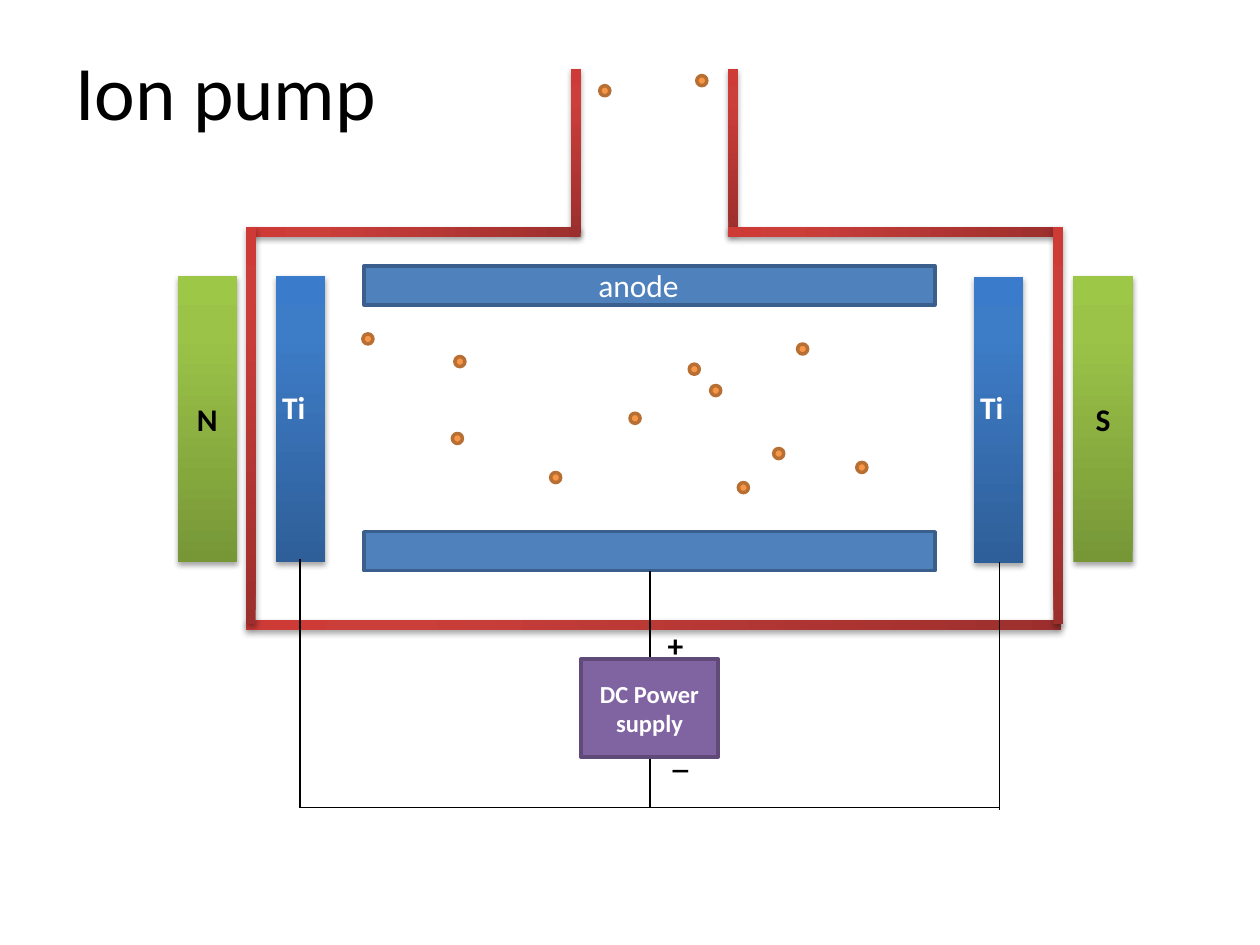
from pptx import Presentation
from pptx.dml.color import RGBColor
from pptx.enum.shapes import MSO_CONNECTOR, MSO_SHAPE as SHAPE
from pptx.enum.text import MSO_ANCHOR as ANCHOR, MSO_AUTO_SIZE as AUTO, PP_ALIGN as ALIGN
from pptx.oxml import parse_xml
from pptx.oxml.ns import nsdecls
from pptx.util import Inches, Pt

THEME = {
    "font": "Calibri",
    "title": 44, "label": 18, "supply": 14,
    "black": "000000", "white": "FFFFFF",
    "wall": ("9C2F2D", "CB3E3A", "CE3B37"),
    "cathode": ("2F5F99", "3D7CC7", "3A7CCB"),
    "magnet": ("779737", "9BC348", "9DC746"),
    "anode": ("4F81BD", "3A5F8C"),
    "power": ("8064A2", "5F4A78"),
    "particle": ("F79646", "B76F34"),
    "outline": 2, "wire": 0.75,
}

WALL = 0.08
UPRIGHT_WALLS = [(4.53, 0.55, 1.3), (5.78, 0.55, 1.3), (1.95, 1.8, 3.15), (8.36, 1.8, 3.15)]
LEVEL_WALLS = [(5.78, 1.8, 2.6), (2.01, 1.8, 2.6), (1.95, 4.92, 6.47)]
ANODE_TOPS = [2.11, 4.22]
CATHODES = [(2.19, 2.19), (7.73, 2.2)]
MAGNETS = [("S", 8.52), ("N", 1.41)]
PARTICLE = 0.08
PARTICLES = [
    (3.61, 2.83), (5, 3.28), (4.37, 3.75), (6.33, 2.73), (6.8, 3.67),
    (5.86, 3.83), (5.47, 2.89), (3.59, 3.44), (5.64, 3.06), (5.53, 0.6),
    (2.88, 2.65), (6.14, 3.56), (4.76, 0.68),
]
WIRES = [
    (2.38, 4.44, 2.38, 6.41), (7.93, 4.46, 7.93, 6.43),
    (5.16, 4.53, 5.16, 6.41), (2.38, 6.41, 7.93, 6.41),
]
LABELS = [
    ("+", (5.2, 4.92, 0.25, 0.4), "black", True),
    ("_", (5.24, 5.8, 0.33, 0.4), "black", True),
    ("Ti", (2.14, 3.03, 0.47, 0.4), "white", True),
    ("Ti", (7.68, 3.03, 0.47, 0.4), "white", True),
    ("anode", (4.65, 2.06, 1, 0.4), "white", False),
]


def rgb(color):
    return RGBColor.from_string(color)


def inches(values):
    return [Inches(value) for value in values]


def write(frame, text, size, color, bold=False, align=ALIGN.LEFT):
    frame.word_wrap = True
    paragraph = frame.paragraphs[0]
    paragraph.alignment = align
    run = paragraph.add_run()
    run.text = text
    run.font.name = THEME["font"]
    run.font.size = Pt(THEME[size])
    run.font.bold = bold
    run.font.color.rgb = rgb(THEME[color])


def write_centred(body, text, size, color):
    body.text_frame.vertical_anchor = ANCHOR.MIDDLE
    write(body.text_frame, text, size, color, True, ALIGN.CENTER)


def add_flat(slide, kind, box, part):
    body = slide.shapes.add_shape(kind, *inches(box))
    fill, edge = THEME[part]
    body.fill.solid()
    body.fill.fore_color.rgb = rgb(fill)
    body.line.color.rgb = rgb(edge)
    body.line.width = Pt(THEME["outline"])
    body.shadow.inherit = False
    return body


def add_glossy(slide, box, part):
    body = slide.shapes.add_shape(SHAPE.RECTANGLE, *inches(box))
    stops = "".join(
        f'<a:gs pos="{place * 1000}"><a:srgbClr val="{color}"/></a:gs>'
        for place, color in zip((0, 80, 100), THEME[part]))
    properties = body.element.spPr
    properties.append(parse_xml(
        f'<a:gradFill {nsdecls("a")} rotWithShape="1"><a:gsLst>{stops}</a:gsLst>'
        '<a:lin ang="16200000" scaled="0"/></a:gradFill>'))
    body.line.fill.background()
    properties.append(parse_xml(
        f'<a:effectLst {nsdecls("a")}><a:outerShdw blurRad="{Pt(3.1)}" dist="{Pt(1.8)}" '
        'dir="5400000" rotWithShape="0"><a:srgbClr val="000000">'
        '<a:alpha val="35000"/></a:srgbClr></a:outerShdw></a:effectLst>'))
    return body


def add_wire(slide, ends):
    wire = slide.shapes.add_connector(MSO_CONNECTOR.STRAIGHT, *inches(ends))
    wire.line.color.rgb = rgb(THEME["black"])
    wire.line.width = Pt(THEME["wire"])
    wire.element.spPr.append(parse_xml(f'<a:effectLst {nsdecls("a")}/>'))


def main():
    deck = Presentation()
    deck.slide_width, deck.slide_height = Inches(10), Inches(7.5)
    slide = deck.slides.add_slide(deck.slide_layouts[6])

    for left, top, length in UPRIGHT_WALLS[:2]:
        add_glossy(slide, (left, top, WALL, length), "wall")
    for left, top, length in LEVEL_WALLS:
        shift = (length - WALL) / 2
        wall = add_glossy(slide, (left + shift, top - shift, WALL, length), "wall")
        wall.rotation = 270
    for left, top, length in UPRIGHT_WALLS[2:]:
        add_glossy(slide, (left, top, WALL, length), "wall")

    for top in ANODE_TOPS:
        add_flat(slide, SHAPE.RECTANGLE, (2.89, top, 4.53, 0.31), "anode")
    for left, top in CATHODES:
        add_glossy(slide, (left, top, 0.39, 2.27), "cathode")
    for pole, left in MAGNETS:
        magnet = add_glossy(slide, (left, 2.19, 0.47, 2.27), "magnet")
        write_centred(magnet, pole, "label", "black")
    for left, top in PARTICLES:
        add_flat(slide, SHAPE.OVAL, (left, top, PARTICLE, PARTICLE), "particle")

    for ends in WIRES:
        add_wire(slide, ends)
    supply = add_flat(slide, SHAPE.RECTANGLE, (4.61, 5.23, 1.09, 0.78), "power")
    write_centred(supply, "DC Power supply", "supply", "white")

    title = slide.shapes.add_textbox(*inches((0.5, 0.3, 9, 1.25)))
    write(title.text_frame, "Ion pump", "title", "black")
    for text, box, color, bold in LABELS:
        label = slide.shapes.add_textbox(*inches(box))
        write(label.text_frame, text, "label", color, bold)
        label.text_frame.auto_size = AUTO.SHAPE_TO_FIT_TEXT

    deck.save("out.pptx")


if __name__ == "__main__":
    main()
